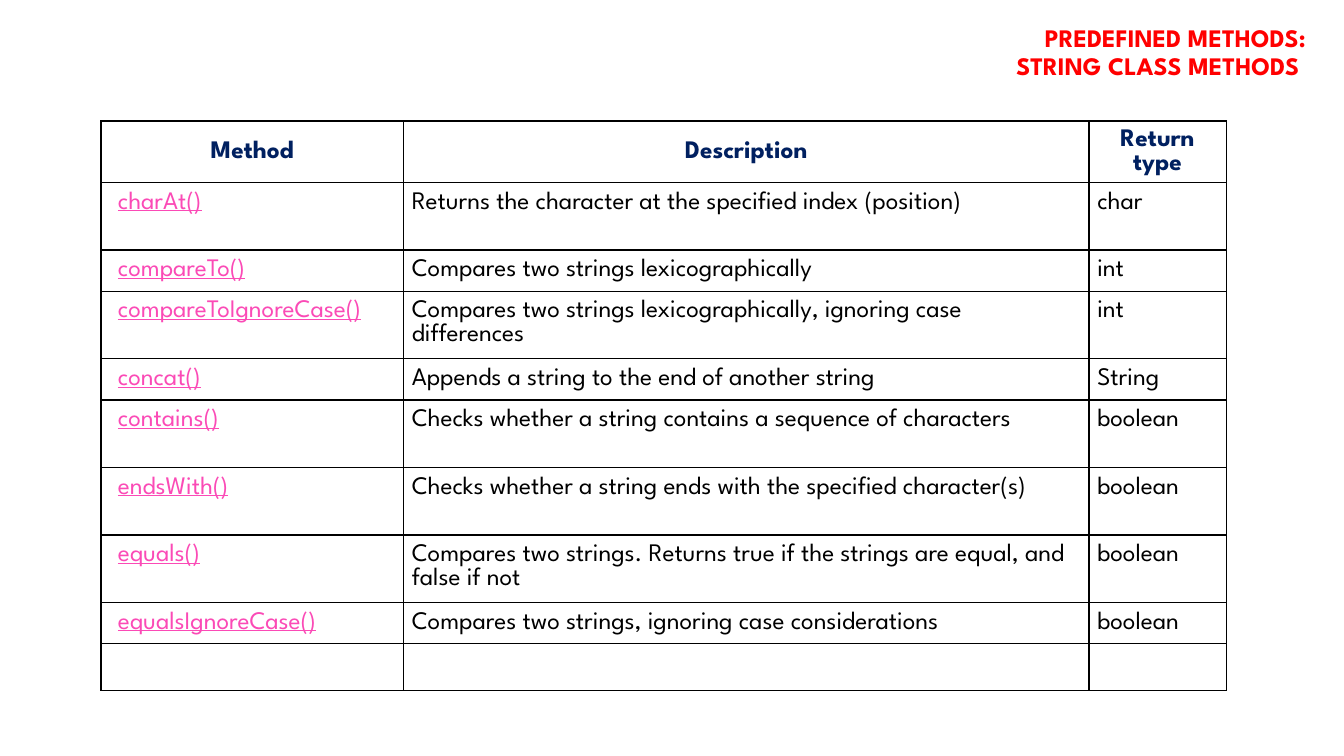
from lxml import etree
from pptx import Presentation
from pptx.dml.color import RGBColor
from pptx.enum.text import MSO_ANCHOR as ANCHOR, PP_ALIGN as ALIGN
from pptx.oxml.ns import qn
from pptx.util import Pt

FONT = "League Spartan"
RED = RGBColor(0xFF, 0x00, 0x00)
NAVY = RGBColor(0x00, 0x20, 0x60)
PINK = RGBColor(0xFB, 0x4A, 0xB6)
BLACK = RGBColor(0x00, 0x00, 0x00)

HEADER = ("Method", "Description", "Return type")
METHODS = [
    ("charAt()", "Returns the character at the specified index (position)", "char"),
    ("compareTo()", "Compares two strings lexicographically", "int"),
    ("compareToIgnoreCase()",
     "Compares two strings lexicographically, ignoring case differences", "int"),
    ("concat()", "Appends a string to the end of another string", "String"),
    ("contains()", "Checks whether a string contains a sequence of characters", "boolean"),
    ("endsWith()", "Checks whether a string ends with the specified character(s)", "boolean"),
    ("equals()",
     "Compares two strings. Returns true if the strings are equal, and false if not", "boolean"),
    ("equalsIgnoreCase()", "Compares two strings, ignoring case considerations", "boolean"),
]
ROWS = [HEADER, *METHODS, ("", "", "")]
COL_WIDTHS = (216, 489.6, 98)
HEAD, TALL, SHORT = 44, 48.2, 29.5
ROW_HEIGHTS = (HEAD, TALL, SHORT, TALL, SHORT, TALL, TALL, TALL, SHORT, SHORT)

HEADER_FONT = {"bold": True, "underline": False}
METHOD_FONT = {"bold": False, "underline": True}
BODY_FONT = {"bold": False, "underline": False}


def add_run(p, text, color, style):
    r = p.add_run()
    r.text = text
    r.font.color.rgb = color
    for name, value in {"name": FONT, "size": Pt(18), **style}.items():
        setattr(r.font, name, value)


def add_borders(cell):
    """Draw a 1 pt black line on all four sides of the cell."""
    tc_pr = cell._tc.get_or_add_tcPr()
    for i, side in enumerate(("lnL", "lnR", "lnT", "lnB")):
        ln = etree.Element(qn(f"a:{side}"), w=str(Pt(1)))
        fill = etree.SubElement(ln, qn("a:solidFill"))
        etree.SubElement(fill, qn("a:srgbClr"), val=str(BLACK))
        tc_pr.insert(i, ln)


prs = Presentation()
prs.slide_width, prs.slide_height = Pt(960), Pt(540)
s = prs.slides.add_slide(prs.slide_layouts[6])

# Title
tf = s.shapes.add_textbox(Pt(308), Pt(8), Pt(632), Pt(59.8)).text_frame
tf.word_wrap = True
tf.vertical_anchor = ANCHOR.MIDDLE
p = tf.paragraphs[0]
p.alignment = ALIGN.RIGHT
p.line_spacing = Pt(20)
add_run(p, "PREDEFINED METHODS:", RED, HEADER_FONT)
p.add_line_break()
add_run(p, "STRING CLASS METHODS ", RED, HEADER_FONT)

# Methods table
table = s.shapes.add_table(len(ROWS), len(HEADER), Pt(72.2), Pt(86.4),
                           Pt(sum(COL_WIDTHS)), Pt(sum(ROW_HEIGHTS))).table
table.first_row = table.horz_banding = False
for col, width in zip(table.columns, COL_WIDTHS):
    col.width = Pt(width)
for row, height in zip(table.rows, ROW_HEIGHTS):
    row.height = Pt(height)

for i, texts in enumerate(ROWS):
    for j, text in enumerate(texts):
        cell = table.cell(i, j)
        cell.fill.background()
        add_borders(cell)
        p = cell.text_frame.paragraphs[0]
        p.line_spacing = Pt(17)
        if i == 0:
            cell.vertical_anchor = ANCHOR.MIDDLE
            p.alignment = ALIGN.CENTER
            color, style = NAVY, HEADER_FONT
        else:
            cell.margin_left = Pt(12 if j == 0 else 6)
            cell.margin_right = cell.margin_top = cell.margin_bottom = Pt(6)
            color, style = (PINK, METHOD_FONT) if j == 0 else (BLACK, BODY_FONT)
        if text:
            add_run(p, text, color, style)

prs.save("out.pptx")
